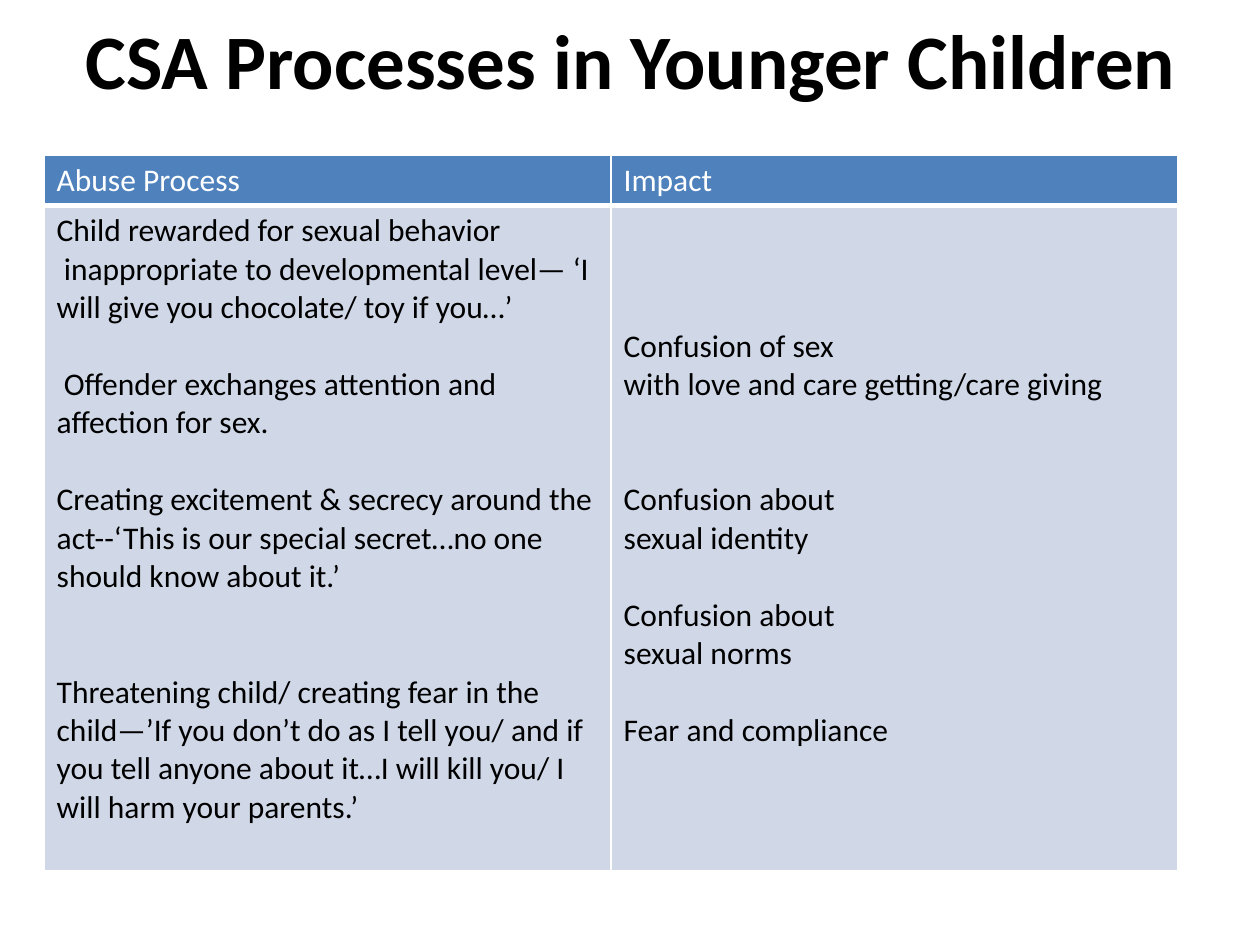
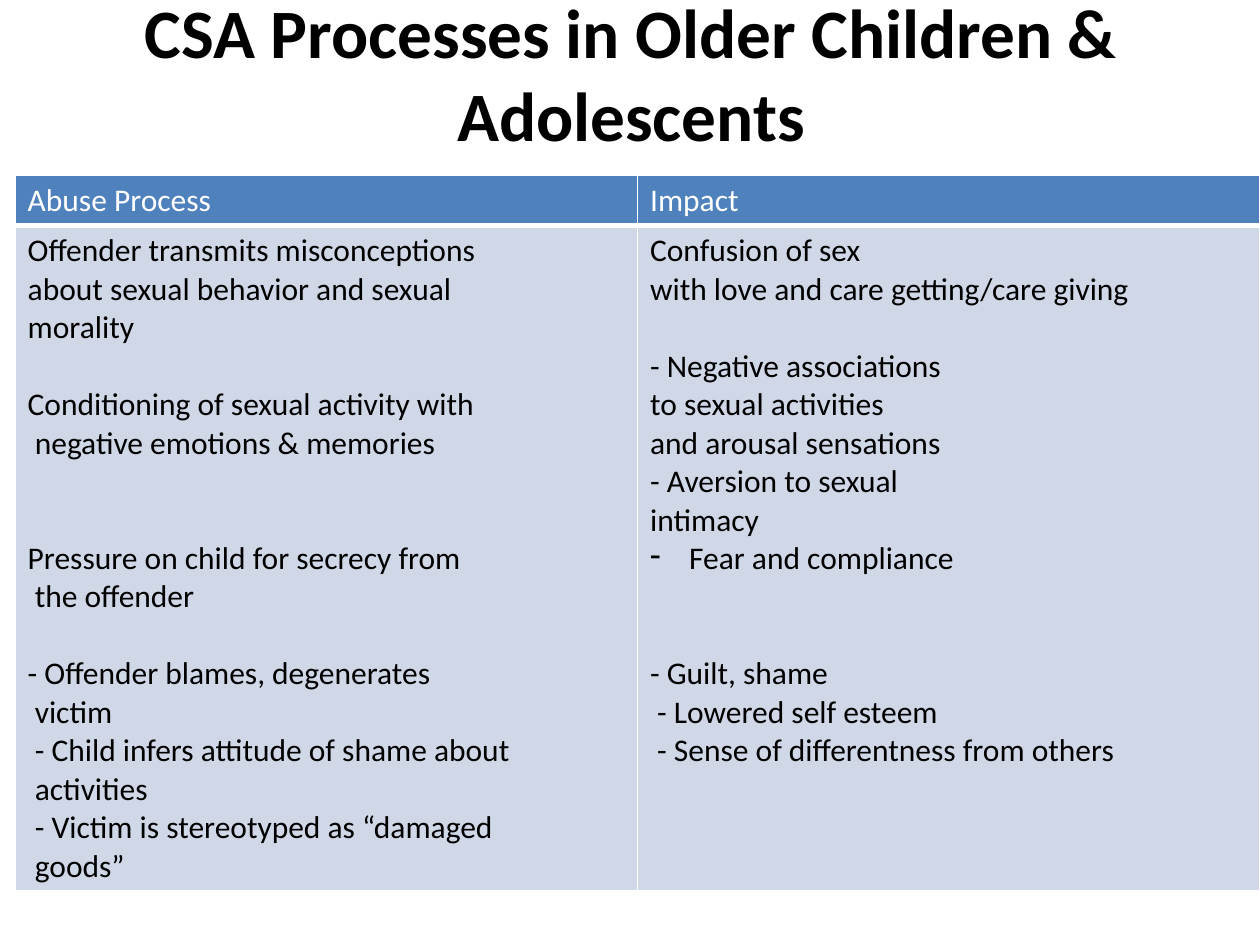
"""Two slides that set abuse processes beside their impact on children."""
from dataclasses import dataclass

from lxml import etree
from pptx import Presentation
from pptx import util as u
from pptx.dml.color import RGBColor
from pptx.enum import text
from pptx.oxml import ns

FONT = "Calibri"
BLACK, WHITE, BLUE, PALE = "000000", "FFFFFF", "4F81BD", "D0D8E8"
BODY_SIZE = 18
LINE_HEIGHT = 21.97
HEADINGS = ("Abuse Process", "Impact")
ROW_HEIGHTS = (0.4, 5.28)


@dataclass
class Line:
    """A paragraph with the number of empty lines above it."""
    text: str
    gap: int = 0
    dash: bool = False


@dataclass
class Comparison:
    """One slide: its title and the two columns of its table."""
    title: str
    title_size: float
    title_height: float
    left: float
    top: float
    width: float
    columns: tuple[list[Line], list[Line]]


YOUNGER = Comparison(
    "CSA Processes in Younger Children", 44, 0.93, 0.35, 1.23, 9,
    ([Line("Child rewarded for sexual behavior"),
      Line(" inappropriate to developmental level— ‘I will give you chocolate/ toy if you…’"),
      Line(" Offender exchanges attention and", 1),
      Line("affection for sex."),
      Line("Creating excitement & secrecy around the act--‘This is our special secret…"
           "no one should know about it.’", 1),
      Line("Threatening child/ creating fear in the child—’If you don’t do as I tell you/ "
           "and if you tell anyone about it…I will kill you/ I will harm your parents.’", 2)],
     [Line("Confusion of sex", 3),
      Line("with love and care getting/care giving"),
      Line("Confusion about", 2),
      Line("sexual identity"),
      Line("Confusion about", 1),
      Line("sexual norms"),
      Line("Fear and compliance", 1)]))

OLDER = Comparison(
    "CSA Processes in Older Children & Adolescents", 39.6, 1.15, 0.12, 1.39, 9.88,
    ([Line("Offender transmits misconceptions"),
      Line("about sexual behavior and sexual"),
      Line("morality"),
      Line("Conditioning of sexual activity with", 1),
      Line(" negative emotions & memories"),
      Line("Pressure on child for secrecy from", 2),
      Line(" the offender"),
      Line("- Offender blames, degenerates", 1),
      Line(" victim"),
      Line(" - Child infers attitude of shame about"),
      Line(" activities"),
      Line(" - Victim is stereotyped as “damaged"),
      Line(" goods”")],
     [Line("Confusion of sex"),
      Line("with love and care getting/care giving"),
      Line("- Negative associations", 1),
      Line("to sexual activities"),
      Line("and arousal sensations"),
      Line("- Aversion to sexual"),
      Line("intimacy"),
      Line("Fear and compliance", dash=True),
      Line("- Guilt, shame", 2),
      Line(" - Lowered self esteem"),
      Line(" - Sense of differentness from others")]))


def rgb(value: str) -> RGBColor:
    """Turn a hex string into a colour."""
    return RGBColor.from_string(value)


def write(p, words: str, size: float = BODY_SIZE, color: str = BLACK,
          bold: bool = False, align=text.PP_ALIGN.LEFT) -> None:
    """Put formatted text into a paragraph."""
    p.alignment = align
    r = p.add_run()
    r.text = words
    r.font.name, r.font.size, r.font.bold = FONT, u.Pt(size), bold
    r.font.color.rgb = rgb(color)


def add_dash(p) -> None:
    """Give a paragraph a hanging dash bullet."""
    pPr = p._p.get_or_add_pPr()
    pPr.set("marL", str(u.Inches(0.31)))
    pPr.set("indent", str(u.Inches(-0.31)))
    etree.SubElement(pPr, ns.qn("a:buChar"), char="-")


def style_cell(cell, fill: str, bottom: float = 1) -> None:
    """Fill a cell and draw its white borders."""
    cell.fill.solid()
    cell.fill.fore_color.rgb = rgb(fill)
    tcPr = cell._tc.get_or_add_tcPr()
    for i, (side, points) in enumerate(zip("LRTB", (1, 1, 1, bottom))):
        ln = etree.Element(ns.qn(f"a:ln{side}"), w=str(u.Pt(points)))
        paint = etree.SubElement(ln, ns.qn("a:solidFill"))
        etree.SubElement(paint, ns.qn("a:srgbClr"), val=WHITE)
        tcPr.insert(i, ln)


def fill_lines(cell, lines: list[Line]) -> None:
    """Write the lines of one column, with gaps as paragraph spacing."""
    tf = cell.text_frame
    cell.margin_top = u.Inches(0.05) + u.Pt(lines[0].gap * LINE_HEIGHT)
    for i, line in enumerate(lines):
        p = tf.add_paragraph() if i else tf.paragraphs[0]
        write(p, line.text)
        if i and line.gap:
            p.space_before = u.Pt(line.gap * LINE_HEIGHT)
        if line.dash:
            add_dash(p)


def add_title(s, item: Comparison) -> None:
    """Add the centred bold title."""
    sp = s.shapes.add_textbox(u.Inches(0.51), 0, u.Inches(9), u.Inches(item.title_height))
    tf = sp.text_frame
    tf.word_wrap = True
    tf.vertical_anchor = text.MSO_ANCHOR.MIDDLE
    write(tf.paragraphs[0], item.title, size=item.title_size, bold=True,
          align=text.PP_ALIGN.CENTER)


def add_comparison(prs, item: Comparison) -> None:
    """Add a slide with a title and a two-column table."""
    s = prs.slides.add_slide(prs.slide_layouts[6])
    add_title(s, item)
    table = s.shapes.add_table(2, 2, u.Inches(item.left), u.Inches(item.top),
                               u.Inches(item.width), u.Inches(sum(ROW_HEIGHTS))).table
    for row, height in zip(table.rows, ROW_HEIGHTS):
        row.height = u.Inches(height)
    for col, (heading, lines) in enumerate(zip(HEADINGS, item.columns)):
        head, body = table.cell(0, col), table.cell(1, col)
        style_cell(head, BLUE, bottom=3)
        write(head.text_frame.paragraphs[0], heading, color=WHITE)
        style_cell(body, PALE)
        fill_lines(body, lines)


def main() -> None:
    """Build and save the slides."""
    prs = Presentation()
    prs.slide_width, prs.slide_height = u.Inches(10), u.Inches(7.5)
    for item in (YOUNGER, OLDER):
        add_comparison(prs, item)
    prs.save("out.pptx")


if __name__ == "__main__":
    main()
